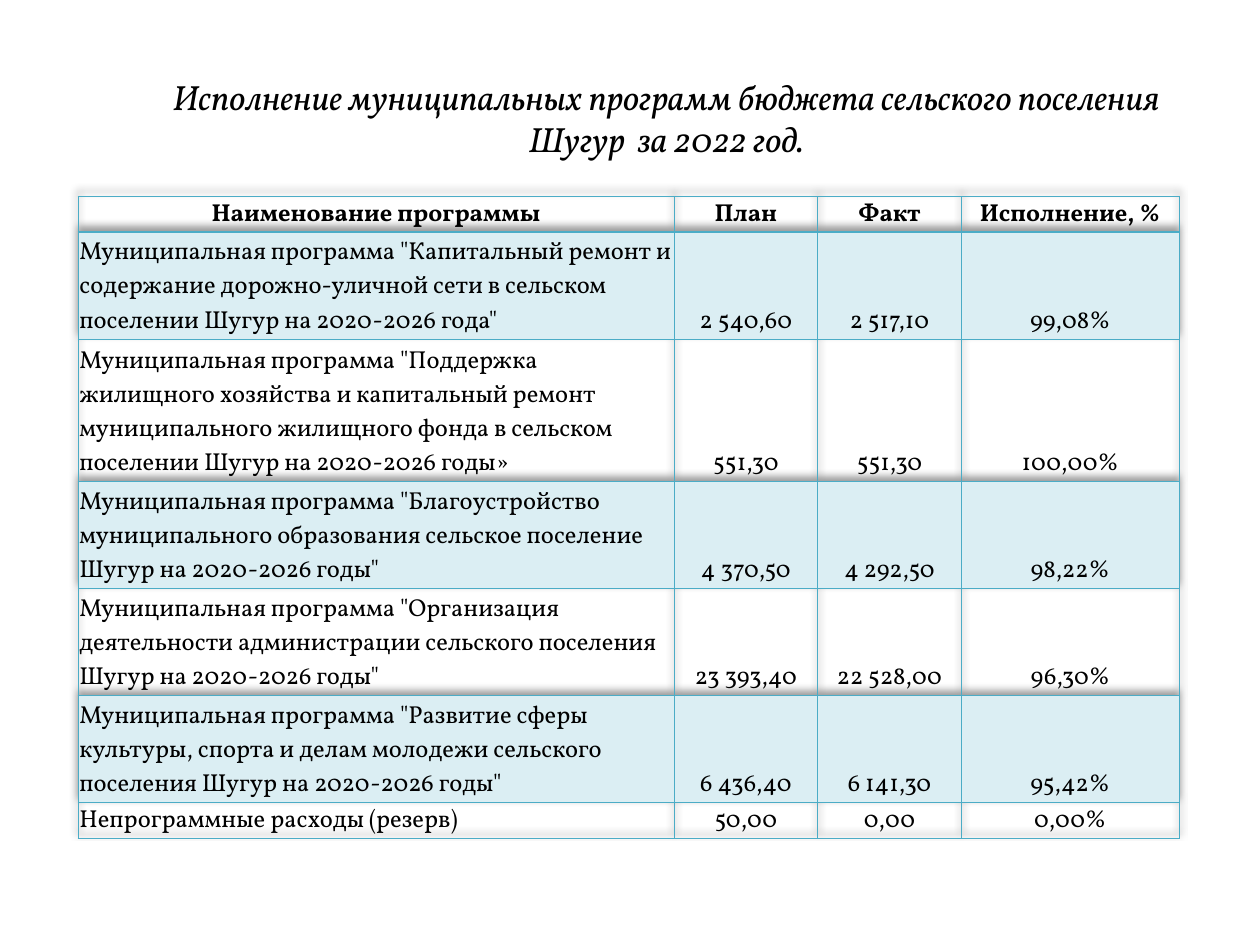
from lxml import etree
from pptx import Presentation
from pptx.dml.color import RGBColor
from pptx.enum import text
from pptx.oxml import ns
from pptx.util import Inches, Pt

# Content
TITLE = "Исполнение муниципальных программ бюджета сельского поселения Шугур  за 2022 год."
HEADINGS = ("Наименование программы", "План", "Факт", "Исполнение, %")
PROGRAMMES = [
    ('Муниципальная программа "Капитальный ремонт и содержание дорожно-уличной сети '
     'в сельском поселении Шугур на 2020-2026 года"', "2 540,60", "2 517,10", "99,08%"),
    ('Муниципальная программа "Поддержка жилищного хозяйства и капитальный ремонт '
     'муниципального жилищного фонда в сельском поселении Шугур на 2020-2026 годы»',
     "551,30", "551,30", "100,00%"),
    ('Муниципальная программа "Благоустройство муниципального образования сельское '
     'поселение Шугур на 2020-2026 годы"', "4 370,50", "4 292,50", "98,22%"),
    ('Муниципальная программа "Организация деятельности администрации сельского '
     'поселения Шугур на 2020-2026 годы"', "23 393,40", "22 528,00", "96,30%"),
    ('Муниципальная программа "Развитие сферы культуры, спорта и делам молодежи '
     'сельского поселения Шугур на 2020-2026 годы"', "6 436,40", "6 141,30", "95,42%"),
    ("Непрограммные расходы (резерв)", "50,00", "0,00", "0,00%"),
]

# Layout and theme
COLUMN_WIDTHS = (4.73, 1.14, 1.14, 1.73)
LINE_COUNTS = (1, 3, 4, 3, 3, 3, 1)
LINE_HEIGHT = 0.283
THEME = {
    "font": "Vollkorn", "ink": "000000", "border": "4BACC6", "band": "DBEEF3",
    "title_outline": "7030A0", "title_size": 20, "table_size": 14,
    "thin": 0.5, "thick": 1, "plain_table": "{2D5ABB26-0587-4C30-8999-92F81FD0307C}",
}
CELL_FORMAT = {
    "vertical_anchor": text.MSO_ANCHOR.BOTTOM, "margin_left": Inches(0.01),
    "margin_top": Inches(0.01), "margin_right": Inches(0.01), "margin_bottom": 0,
}


def apply(target, values):
    for name, value in values.items():
        setattr(target, name, value)


def write(paragraph, wording, align, **font_format):
    run = paragraph.add_run()
    run.text = wording
    paragraph.alignment = align
    apply(run.font, {"name": THEME["font"], **font_format})
    run.font.color.rgb = RGBColor.from_string(THEME["ink"])
    return run


def add_xml(parent, tag, position=None, **attributes):
    element = etree.Element(ns.qn(tag), {k: str(v) for k, v in attributes.items()})
    parent.insert(len(parent) if position is None else position, element)
    return element


def add_line(parent, tag, points, colour, position=None):
    line = add_xml(parent, tag, position, w=int(Pt(points)))
    add_xml(add_xml(line, "a:solidFill"), "a:srgbClr", val=colour)


deck = Presentation()
apply(deck, {"slide_width": Inches(10), "slide_height": Inches(7.5)})
slide = deck.slides.add_slide(deck.slide_layouts[6])

# Title
heading = slide.shapes.add_textbox(Inches(1.02), Inches(0.55), Inches(8.54), Inches(0.77)).text_frame
heading.word_wrap = True
title_run = write(heading.paragraphs[0], TITLE, text.PP_ALIGN.CENTER,
                  size=Pt(THEME["title_size"]), italic=True)
add_line(title_run.font._element, "a:ln", THEME["thin"], THEME["title_outline"], 0)

# Programme table
rows = [HEADINGS, *PROGRAMMES]
programme_table = slide.shapes.add_table(
    len(rows), len(HEADINGS), Inches(0.62), Inches(1.56),
    Inches(sum(COLUMN_WIDTHS)), Inches(sum(LINE_COUNTS) * LINE_HEIGHT)).table
for column, width in zip(programme_table.columns, COLUMN_WIDTHS):
    column.width = Inches(width)
for row, lines in zip(programme_table.rows, LINE_COUNTS):
    row.height = Inches(lines * LINE_HEIGHT)

# Plain style with a soft shadow
table_format = programme_table._tbl.tblPr
table_format.find(ns.qn("a:tableStyleId")).text = THEME["plain_table"]
shadow = add_xml(add_xml(table_format, "a:effectLst", 0), "a:outerShdw",
                 blurRad=int(Pt(4)), dist=int(Pt(3)), dir=16200000, rotWithShape=0)
add_xml(add_xml(shadow, "a:srgbClr", val=THEME["ink"]), "a:alpha", val=40000)

# Cells: every second row is banded, a thicker rule sits under the headings
for r, values in enumerate(rows):
    for c, value in enumerate(values):
        cell = programme_table.cell(r, c)
        apply(cell, CELL_FORMAT)
        is_name = r > 0 and c == 0
        write(cell.text_frame.paragraphs[0], value,
              text.PP_ALIGN.LEFT if is_name else text.PP_ALIGN.CENTER,
              size=Pt(THEME["table_size"]), bold=r == 0)
        cell_format = cell._tc.get_or_add_tcPr()
        for side in "LRTB":
            under_headings = (r, side) in ((0, "B"), (1, "T"))
            add_line(cell_format, f"a:ln{side}",
                     THEME["thick" if under_headings else "thin"], THEME["border"])
        if r % 2:
            cell.fill.solid()
            cell.fill.fore_color.rgb = RGBColor.from_string(THEME["band"])
        else:
            cell.fill.background()

deck.save("out.pptx")
